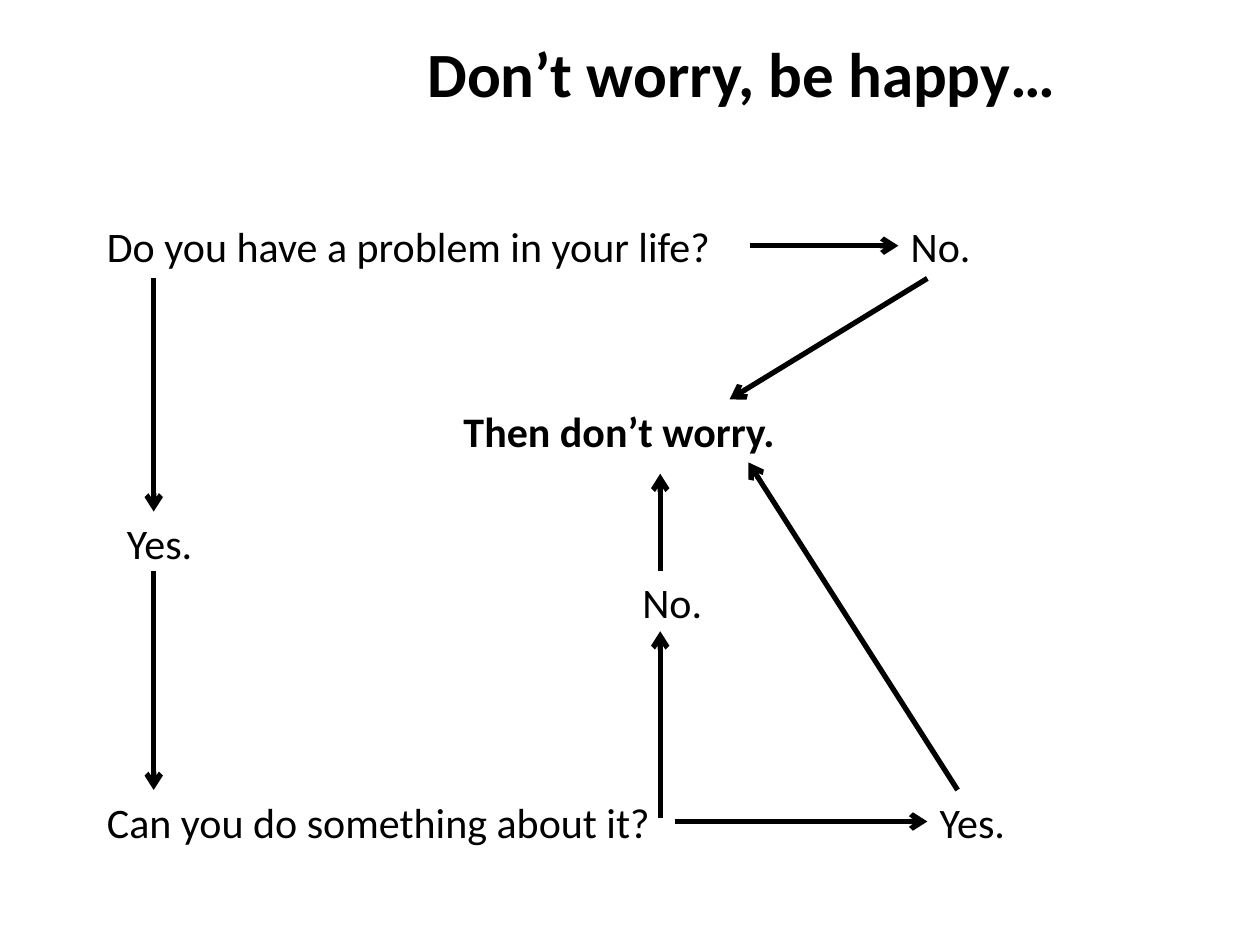
from lxml import etree
from pptx import Presentation
from pptx.dml.color import RGBColor
from pptx.enum.shapes import MSO_CONNECTOR
from pptx.enum.text import MSO_ANCHOR, MSO_AUTO_SIZE, PP_ALIGN
from pptx.oxml.ns import qn
from pptx.util import Inches, Pt

STRAIGHT = MSO_CONNECTOR.STRAIGHT
MIDDLE, TOP = MSO_ANCHOR.MIDDLE, MSO_ANCHOR.TOP
CENTER, LEFT = PP_ALIGN.CENTER, PP_ALIGN.LEFT
FIT, FIXED = MSO_AUTO_SIZE.SHAPE_TO_FIT_TEXT, MSO_AUTO_SIZE.NONE

deck = Presentation()
deck.slide_width, deck.slide_height = Inches(10), Inches(7.5)
slide = deck.slides.add_slide(deck.slide_layouts[6])

# Grid of 100 columns by 75 rows
COL, ROW = deck.slide_width / 100, deck.slide_height / 75
INK = "000000"


def color(code):
    return RGBColor.from_string(code)


def add_text(text, col, row, wide, high=5, size=24, bold=False,
             anchor=TOP, align=LEFT, fit=FIT):
    box = slide.shapes.add_textbox(int(col * COL), int(row * ROW),
                                   int(wide * COL), int(high * ROW))
    frame = box.text_frame
    look = {"word_wrap": True, "auto_size": fit, "vertical_anchor": anchor}
    for key, value in look.items():
        setattr(frame, key, value)
    para = frame.paragraphs[0]
    para.alignment = align
    run = para.add_run()
    run.text = text
    style = {"name": "Calibri", "size": Pt(size), "bold": bold}
    for key, value in style.items():
        setattr(run.font, key, value)
    run.font.color.rgb = color(INK)
    return box


add_text("Don’t worry, be happy…", 17.7, 0, 82.3, 11.5, size=36, bold=True,
         anchor=MIDDLE, align=CENTER, fit=FIXED)

ASK, ACT = 17, 62.7  # rows of the two questions
have = add_text("Do you have a problem in your life?", 7.5, ASK, 52)
calm = add_text("Then don’t worry.", 35.8, 31.7, 40.2, bold=True)
can = add_text("Can you do something about it?", 7.5, ACT, 46.1)

# Answers
none = add_text("No.", 71.3, ASK, 15.7)
some = add_text("Yes.", 9.1, 40.6, 15.7)
able = add_text("Yes.", 73.6, ACT, 15.7)
stuck = add_text("No.", 50, 45.3, 15.7)

# Arrows: start column and row, end column and row, joined boxes
DOWN, UP = 12.2, 52.4  # columns of the upright arrows
arrows = [
    (59.5, 19.5, 71.3, 19.5, have, none),
    (DOWN, 22.1, DOWN, 40.6, None, None),
    (DOWN, 45.3, DOWN, 62.7, None, None),
    (53.6, 65.2, 73.6, 65.2, can, able),
    (UP, 64.9, UP, 50.1, None, None),
    (UP, 45.3, UP, 37.6, None, None),
    (73.6, 22.1, 57.9, 31.7, None, None),
    (76, 62.7, 59.4, 36.7, None, None),
]
for x1, y1, x2, y2, tail, head in arrows:
    arrow = slide.shapes.add_connector(
        STRAIGHT, int(x1 * COL), int(y1 * ROW), int(x2 * COL), int(y2 * ROW))
    if tail:
        arrow.begin_connect(tail, 3)
        arrow.end_connect(head, 1)
    arrow.line.width = Pt(3)
    arrow.line.color.rgb = color(INK)
    etree.SubElement(arrow.line._get_or_add_ln(), qn("a:tailEnd"), type="arrow")
    etree.SubElement(arrow._element.spPr, qn("a:effectLst"))

deck.save("out.pptx")
